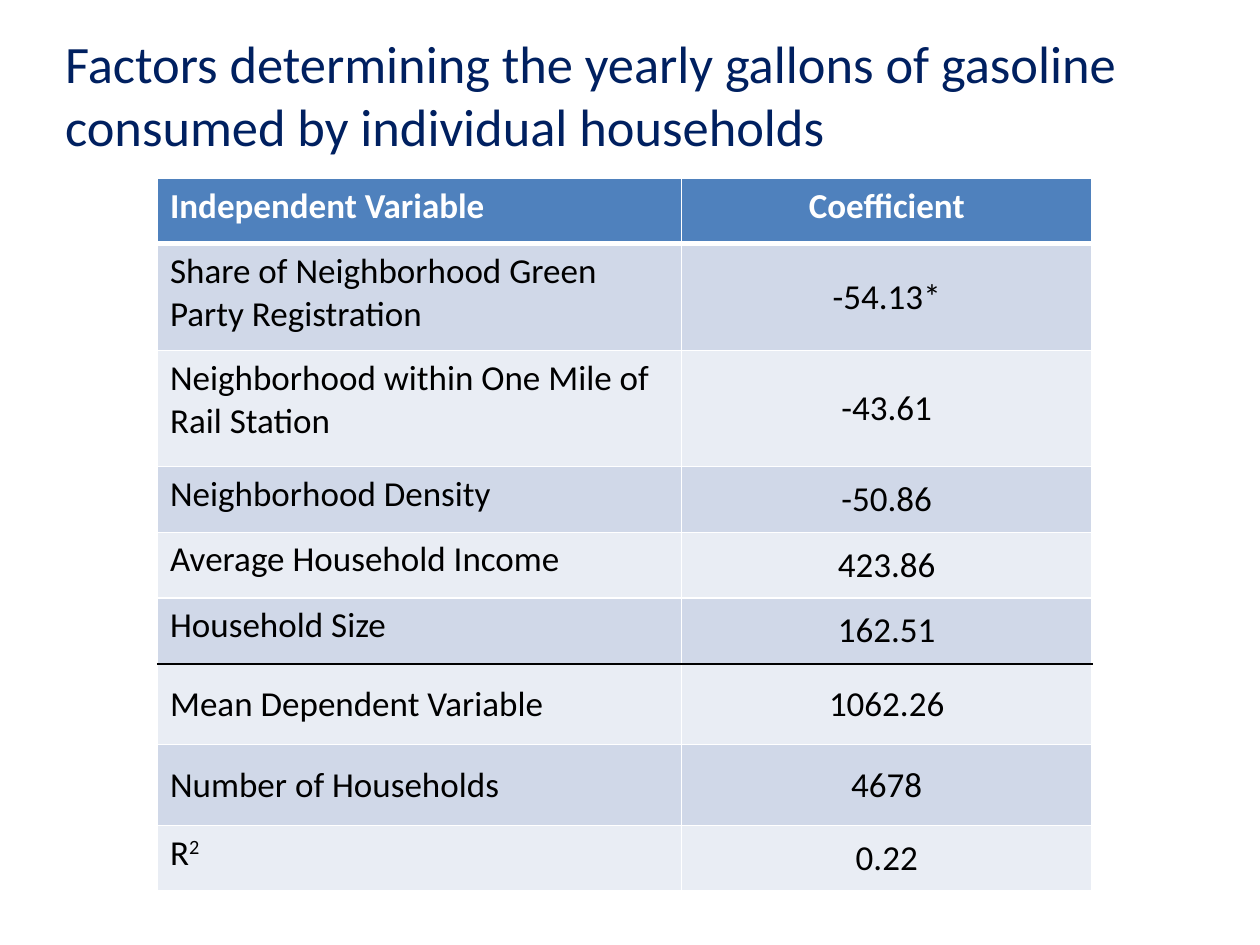
from dataclasses import dataclass

import lxml.etree
import pptx
import pptx.dml.color
import pptx.enum.text
import pptx.oxml.ns
import pptx.table
import pptx.text.text
import pptx.util

Pt = pptx.util.Pt
ANCHOR = pptx.enum.text.MSO_ANCHOR
ALIGN = pptx.enum.text.PP_ALIGN

FONT = "Calibri"
COLORS = {
    "title": "002060",
    "header": "4F81BD",
    "odd_band": "D0D8E8",
    "even_band": "E9EDF4",
    "white": "FFFFFF",
    "black": "000000",
}
COLUMN_WIDTHS = (299.5, 234.5)


@dataclass(frozen=True)
class Factor:
    label: str
    coefficient: str
    height: float = 37.6
    label_anchor: ANCHOR = ANCHOR.TOP
    coefficient_anchor: ANCHOR = ANCHOR.MIDDLE
    superscript: str = ""


@dataclass(frozen=True)
class Border:
    color: str = "white"
    width: float = 1


FACTORS = (
    Factor("Independent Variable", "Coefficient", 37.2, coefficient_anchor=ANCHOR.TOP),
    Factor("Share of Neighborhood Green Party Registration", "-54.13*", 61.2),
    Factor("Neighborhood within One Mile of Rail Station", "-43.61", 66.2),
    Factor("Neighborhood Density", "-50.86"),
    Factor("Average Household Income", "423.86"),
    Factor("Household Size", "162.51"),
    Factor("Mean Dependent Variable", "1062.26", 46.2, ANCHOR.MIDDLE),
    Factor("Number of Households", "4678", 46.2, ANCHOR.MIDDLE),
    Factor("R", "0.22", superscript="2"),
)
# Rules below a row, by row index; every other border is thin and white.
RULES = {0: Border(width=3), 5: Border("black")}


def rgb(color: str) -> pptx.dml.color.RGBColor:
    return pptx.dml.color.RGBColor.from_string(COLORS[color])


def add_run(paragraph: pptx.text.text._Paragraph, text: str, size: float,
            color: str, bold: bool = False, superscript: bool = False) -> None:
    run = paragraph.add_run()
    run.text = text
    run.font.name = FONT
    run.font.size = Pt(size)
    run.font.bold = bold
    run.font.color.rgb = rgb(color)
    if superscript:
        run._r.get_or_add_rPr().set("baseline", "30000")


def set_borders(cell: pptx.table._Cell, above: Border, below: Border) -> None:
    qn = pptx.oxml.ns.qn
    properties = cell._tc.get_or_add_tcPr()
    sides = {"a:lnL": Border(), "a:lnR": Border(), "a:lnT": above, "a:lnB": below}
    for position, (tag, border) in enumerate(sides.items()):
        line = lxml.etree.Element(qn(tag), w=str(Pt(border.width)))
        fill = lxml.etree.SubElement(line, qn("a:solidFill"))
        lxml.etree.SubElement(fill, qn("a:srgbClr"), val=COLORS[border.color])
        properties.insert(position, line)


def fill_row(table: pptx.table.Table, index: int, factor: Factor) -> None:
    header = index == 0
    band = "header" if header else "odd_band" if index % 2 else "even_band"
    text_color = "white" if header else "black"
    table.rows[index].height = Pt(factor.height)
    columns = (
        (factor.label, factor.label_anchor, ALIGN.LEFT),
        (factor.coefficient, factor.coefficient_anchor, ALIGN.CENTER),
    )
    for column, (text, anchor, alignment) in enumerate(columns):
        cell = table.cell(index, column)
        cell.fill.solid()
        cell.fill.fore_color.rgb = rgb(band)
        cell.vertical_anchor = anchor
        paragraph = cell.text_frame.paragraphs[0]
        paragraph.alignment = alignment
        add_run(paragraph, text, 20, text_color, header)
        if column == 0 and factor.superscript:
            add_run(paragraph, factor.superscript, 20, text_color, superscript=True)
        set_borders(cell, RULES.get(index - 1, Border()), RULES.get(index, Border()))


def main() -> None:
    deck = pptx.Presentation()
    deck.slide_width, deck.slide_height = Pt(720), Pt(540)
    slide = deck.slides.add_slide(deck.slide_layouts.get_by_name("Title Only"))

    title = slide.shapes.title
    title.left, title.top, title.width, title.height = Pt(30), Pt(12), Pt(648), Pt(84)
    title.text_frame.word_wrap = True
    title.text_frame.vertical_anchor = ANCHOR.MIDDLE
    heading = title.text_frame.paragraphs[0]
    heading.alignment = ALIGN.LEFT
    add_run(heading, "Factors determining the yearly gallons of gasoline "
            "consumed by individual households", 30, "title")

    table = slide.shapes.add_table(
        len(FACTORS), len(COLUMN_WIDTHS), Pt(90), Pt(102),
        Pt(sum(COLUMN_WIDTHS)), Pt(sum(factor.height for factor in FACTORS)),
    ).table
    for column, width in zip(table.columns, COLUMN_WIDTHS):
        column.width = Pt(width)
    for index, factor in enumerate(FACTORS):
        fill_row(table, index, factor)

    deck.save("out.pptx")


if __name__ == "__main__":
    main()
